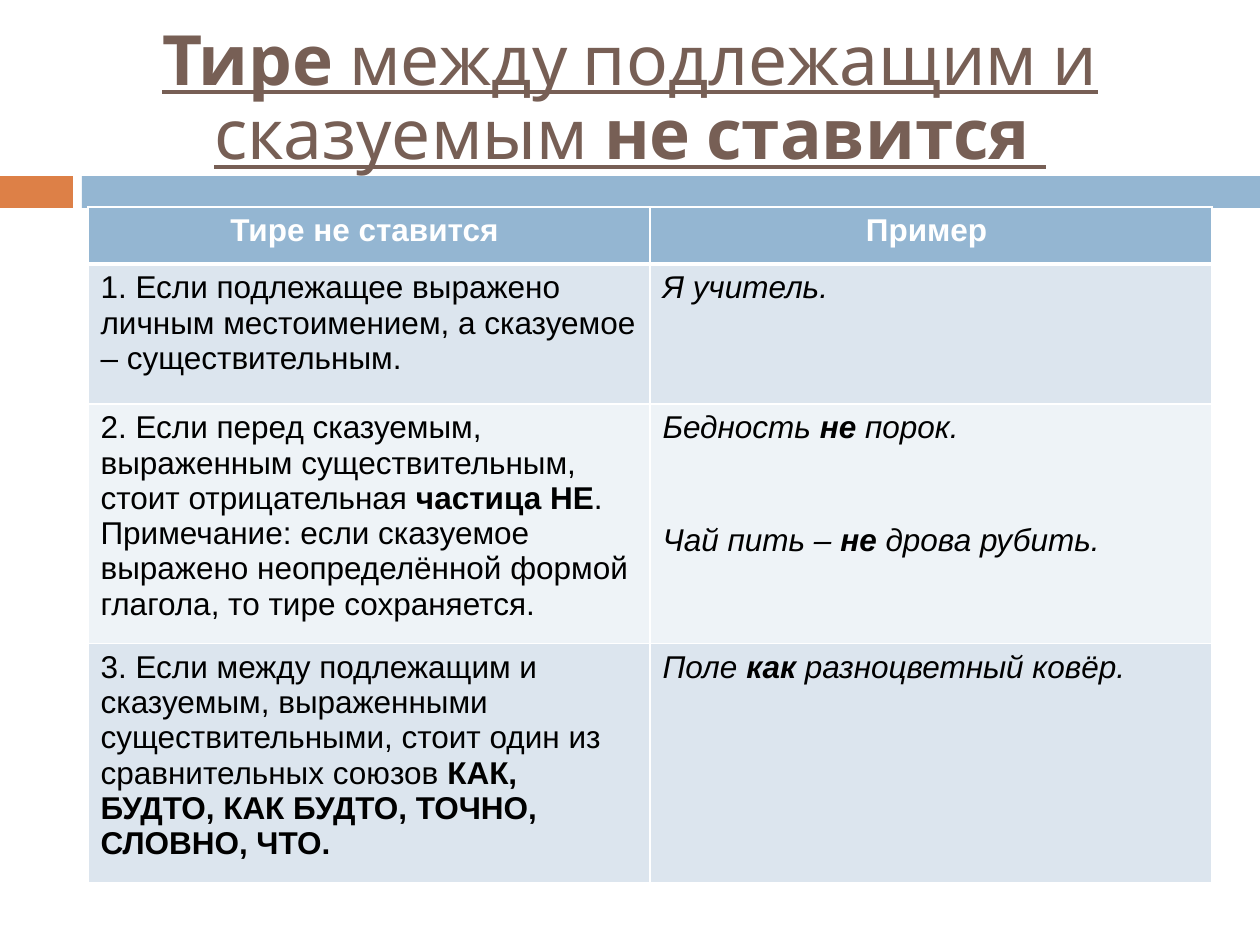
from lxml.etree import SubElement
from pptx import Presentation
from pptx.dml.color import RGBColor
from pptx.enum.shapes import MSO_SHAPE
from pptx.enum.text import MSO_ANCHOR, PP_ALIGN
from pptx.oxml.ns import qn
from pptx.util import Emu, Pt

PX = 914400 / 126
BROWN = RGBColor(0x77, 0x5F, 0x55)
ORANGE = RGBColor(0xDD, 0x80, 0x47)
BLUE = RGBColor(0x94, 0xB6, 0xD2)
PALE_BLUE = RGBColor(0xDC, 0xE5, 0xEE)
PALER_BLUE = RGBColor(0xEE, 0xF3, 0xF7)
WHITE = RGBColor(0xFF, 0xFF, 0xFF)
BLACK = RGBColor(0x00, 0x00, 0x00)

# A paragraph is a list of spans; every second span is bold.
TITLE = ["", "Тире", " между подлежащим и сказуемым ", "не ставится "]
HEADINGS = ["Тире не ставится ", "Пример "]
RULES = [
    (
        [["1. Если подлежащее выражено личным местоимением, "
          "а сказуемое – существительным."]],
        [["Я учитель."]],
    ),
    (
        [["2. Если перед сказуемым, выраженным существительным, "
          "стоит отрицательная ", "частица НЕ", "."],
         ["Примечание: если сказуемое выражено неопределённой формой "
          "глагола, то тире сохраняется."]],
        [["Бедность ", "не", " порок."],
         ["Чай пить – ", "не", " дрова рубить."]],
    ),
    (
        [["3. Если между подлежащим и сказуемым, выраженными "
          "существительными, стоит один из сравнительных союзов ",
          "КАК, БУДТО, КАК БУДТО, ТОЧНО, СЛОВНО, ЧТО."]],
        [["Поле ", "как ", "разноцветный ковёр."]],
    ),
]


def px(length):
    return Emu(round(length * PX))


def scaled(box):
    return [px(length) for length in box]


def write_spans(para, spans, size, name, color):
    para.font.size = Pt(size)
    para.font.name = name
    para.font.color.rgb = color
    for index, text in enumerate(spans):
        if text:
            span = para.add_run()
            span.text = text
            span.font.bold = index % 2 == 1


def add_bar(page, box, color):
    bar = page.shapes.add_shape(MSO_SHAPE.RECTANGLE, *scaled(box))
    bar.shadow.inherit = False
    bar.fill.solid()
    bar.fill.fore_color.rgb = color
    bar.line.fill.background()


def add_band(page, box):
    """Short orange bar, a gap, and a blue bar filling the rest of the box."""
    left, top, width, height = box
    short, gap = 73, 9
    add_bar(page, (left, top, short, height), ORANGE)
    start = short + gap
    add_bar(page, (left + start, top, width - start, height), BLUE)


def add_title(page, box):
    frame = page.shapes.add_textbox(*scaled(box)).text_frame
    frame.word_wrap = True
    frame.vertical_anchor = MSO_ANCHOR.MIDDLE
    para = frame.paragraphs[0]
    para.alignment = PP_ALIGN.CENTER
    para.line_spacing = 0.9
    write_spans(para, TITLE, 39.6, "Cabin", BROWN)
    para.font.underline = True
    for span in para.runs:
        span.font.underline = True


def style_cell(cell, color, bottom=1):
    """Fill the cell and give it white borders, before the fill in the XML."""
    properties = cell._tc.get_or_add_tcPr()
    for side, points in (("L", 1), ("R", 1), ("T", 1), ("B", bottom)):
        line = SubElement(properties, qn(f"a:ln{side}"), w=str(Pt(points)))
        fill = SubElement(line, qn("a:solidFill"))
        SubElement(fill, qn("a:srgbClr"), val=str(WHITE))
    cell.fill.solid()
    cell.fill.fore_color.rgb = color


def add_rules_table(page, box):
    left, top, width, height = box
    header_height = 57
    grid = page.shapes.add_table(len(RULES) + 1, 2, *scaled(box)).table
    for column in grid.columns:
        column.width = px(width / 2)
    for row in grid.rows:
        row.height = px((height - header_height) / len(RULES))
    grid.rows[0].height = px(header_height)

    for cell, heading in zip(grid.rows[0].cells, HEADINGS):
        style_cell(cell, BLUE, bottom=3)
        para = cell.text_frame.paragraphs[0]
        para.alignment = PP_ALIGN.CENTER
        write_spans(para, ["", heading], 18, "Arial", WHITE)

    for row, rule in enumerate(RULES, start=1):
        for column, paragraphs in enumerate(rule):
            cell = grid.cell(row, column)
            style_cell(cell, PALE_BLUE if row % 2 else PALER_BLUE)
            is_example = column == 1
            frame = cell.text_frame
            for index, spans in enumerate(paragraphs):
                para = frame.add_paragraph() if index else frame.paragraphs[0]
                write_spans(para, spans, 18, "Arial", BLACK)
                para.font.italic = is_example
                for span in para.runs:
                    span.font.italic = is_example
                if is_example and index:
                    para.space_before = Pt(44)


def main():
    deck = Presentation()
    deck.slide_width, deck.slide_height = px(1260), px(945)
    page = deck.slides.add_slide(deck.slide_layouts[6])
    add_band(page, (0, 176, 1260, 32))
    add_title(page, (0, 32, 1260, 136))
    add_rules_table(page, (88, 207, 1124, 477))
    deck.save("out.pptx")


if __name__ == "__main__":
    main()
